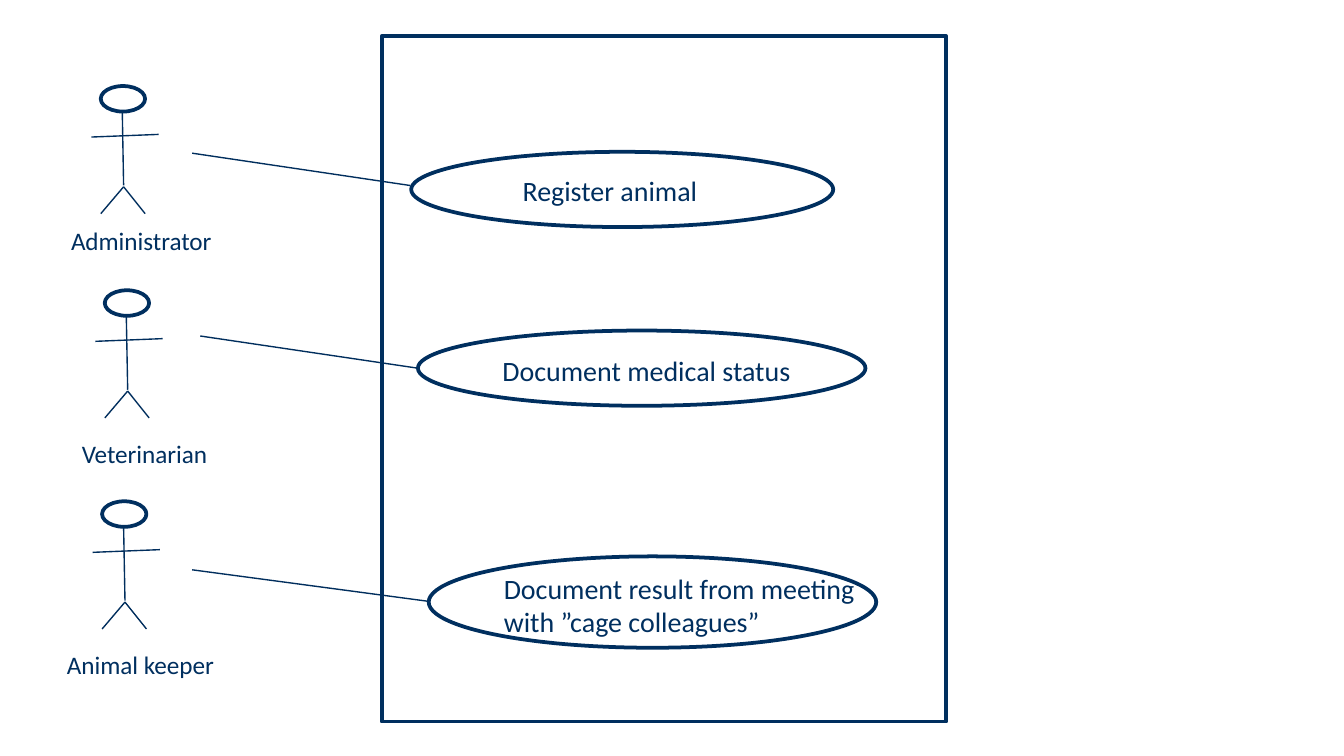
import pptx
import pptx.dml.color
import pptx.enum.shapes
import pptx.oxml.ns
import pptx.util
from lxml import etree

Inches = pptx.util.Inches
Shapes = pptx.enum.shapes.MSO_SHAPE

COLOURS = {"outline": "002F5F", "stroke": "002E5D", "text": "002F5F", "paper": "FFFFFF"}

# Actor name, left and top of the head, left and top of the label
ACTORS = [
    ("Administrator", 0.75, 0.64, 0.43, 1.63),
    ("Veterinarian", 0.78, 2.16, 0.51, 3.21),
    ("Animal keeper", 0.76, 3.73, 0.4, 4.78),
]

# Use case, its ellipse, its text box, start and end of its association
USE_CASES = [
    ("Register animal", (3.06, 1.13, 3.14, 0.56), (3.79, 1.24, 1.7, 0.35),
     (1.43, 1.14), (3.05, 1.38)),
    ("Document medical status", (3.11, 2.46, 3.33, 0.56), (3.64, 2.58, 2.91, 0.35),
     (1.49, 2.5), (3.11, 2.74)),
    ("Document result from meeting with ”cage colleagues”", (3.19, 4.14, 3.33, 0.68),
     (3.65, 4.2, 2.91, 0.61), (1.43, 4.24), (3.23, 4.48)),
]

# Body, arms and legs, measured from the top left of the head
LIMBS = [
    ((0.16, 0.19), (0.17, 0.74)),
    ((-0.07, 0.38), (0.43, 0.36)),
    ((0.17, 0.75), (0, 0.95)),
    ((0.17, 0.75), (0.33, 0.95)),
]


def colour(name):
    return pptx.dml.color.RGBColor.from_string(COLOURS[name])


class Diagram:
    """Draws use case elements in one style on the current page."""

    font = "Calibri"
    outline_width = 2
    stroke_width = 0.75

    def __init__(self, page):
        self.page = page

    def outline(self, kind, place):
        shape = self.page.shapes.add_shape(kind, *map(Inches, place))
        shape.shadow.inherit = False
        shape.fill.solid()
        shape.fill.fore_color.rgb = colour("paper")
        shape.line.color.rgb = colour("outline")
        shape.line.width = pptx.util.Pt(self.outline_width)

    def stroke(self, start, end):
        line = self.page.shapes.add_connector(
            pptx.enum.shapes.MSO_CONNECTOR.STRAIGHT, *map(Inches, (*start, *end)))
        line.line.color.rgb = colour("stroke")
        line.line.width = pptx.util.Pt(self.stroke_width)
        etree.SubElement(line._element.spPr, pptx.oxml.ns.qn("a:effectLst"))

    def text(self, words, place, size=15):
        box = self.page.shapes.add_textbox(*map(Inches, place))
        box.text_frame.word_wrap = True
        para = box.text_frame.paragraphs[0]
        span = para.add_run()
        span.text = words
        span.font.name = self.font
        span.font.size = pptx.util.Pt(size)
        span.font.color.rgb = colour("text")

    def actor(self, name, left, top, label_left, label_top):
        self.outline(Shapes.OVAL, (left, top, 0.33, 0.19))
        for start, end in LIMBS:
            self.stroke((left + start[0], top + start[1]), (left + end[0], top + end[1]))
        self.text(name, (label_left, label_top, 1.35, 0.33), size=13.5)

    def use_case(self, name, ellipse, label, start, end):
        self.stroke(start, end)
        self.outline(Shapes.OVAL, ellipse)
        self.text(name, label)


def main():
    deck = pptx.Presentation()
    deck.slide_width = Inches(10)
    deck.slide_height = deck.slide_width * 9 // 16
    diagram = Diagram(deck.slides.add_slide(deck.slide_layouts[6]))
    diagram.outline(Shapes.RECTANGLE, (2.84, 0.27, 4.2, 5.1))
    for actor in ACTORS:
        diagram.actor(*actor)
    for use_case in USE_CASES:
        diagram.use_case(*use_case)
    deck.save("out.pptx")


if __name__ == "__main__":
    main()
